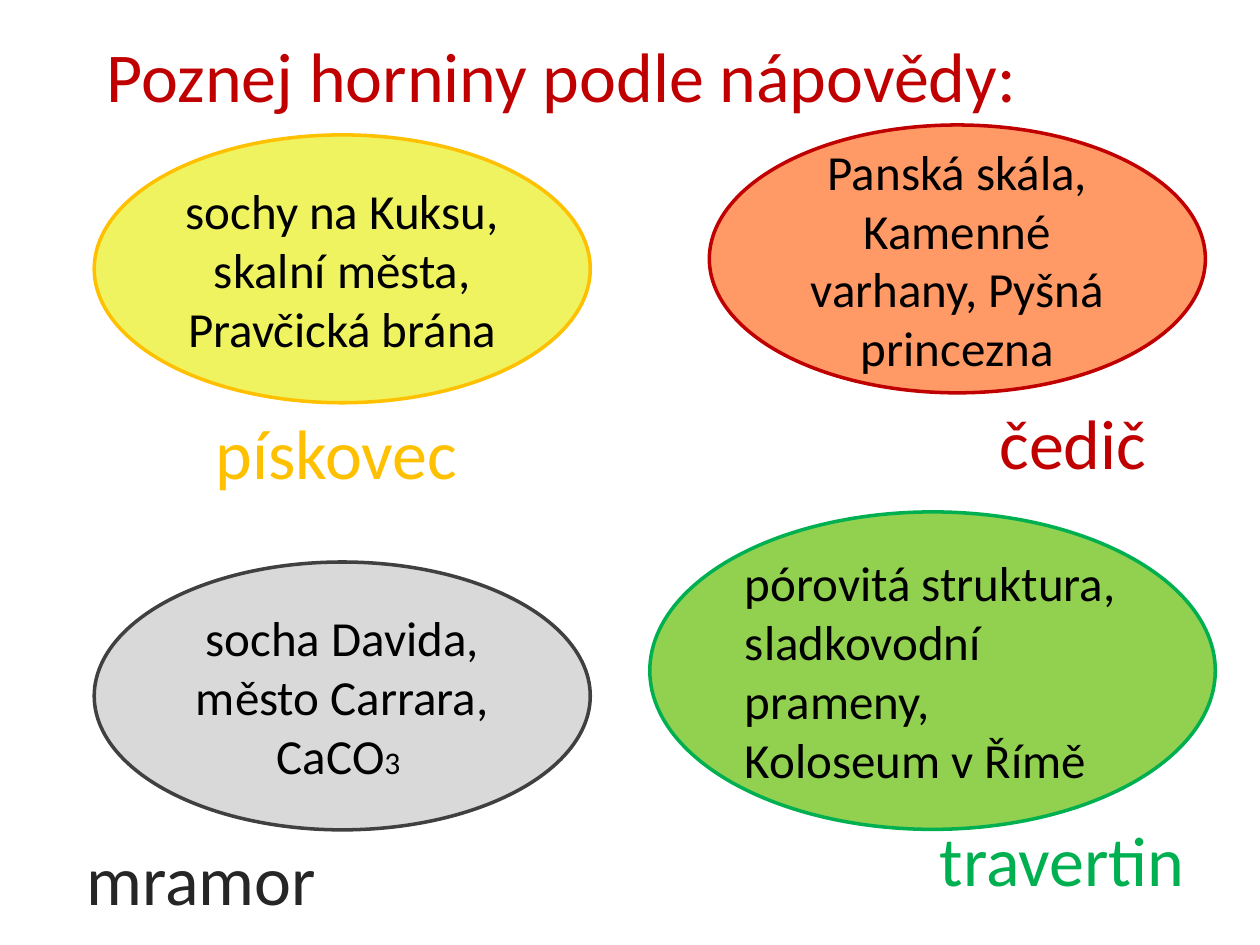
"""Build a quiz slide on recognising rocks from hints."""
from pptx import Presentation
from pptx.dml.color import RGBColor
from pptx.enum.shapes import MSO_SHAPE
from pptx.enum.text import MSO_ANCHOR, MSO_AUTO_SIZE, PP_ALIGN
from pptx.util import Cm, Pt

BLACK = RGBColor(0x00, 0x00, 0x00)
CHARCOAL = RGBColor(0x26, 0x26, 0x26)
DARK_GREY = RGBColor(0x40, 0x40, 0x40)
LIGHT_GREY = RGBColor(0xD9, 0xD9, 0xD9)
YELLOW = RGBColor(0xEF, 0xF3, 0x5F)
AMBER = RGBColor(0xFF, 0xC0, 0x00)
LIME = RGBColor(0x92, 0xD0, 0x50)
GREEN = RGBColor(0x00, 0xB0, 0x50)
ORANGE = RGBColor(0xFF, 0x99, 0x66)
RED = RGBColor(0xC0, 0x00, 0x00)


def place(shape, left, top, width, height):
    shape.left, shape.top = Cm(left), Cm(top)
    shape.width, shape.height = Cm(width), Cm(height)


def style(paragraph, size, color, align):
    paragraph.alignment = align
    paragraph.font.name = "Calibri"
    paragraph.font.size = Pt(size)
    paragraph.font.color.rgb = color


deck = Presentation()
deck.slide_width, deck.slide_height = Cm(25.4), Cm(19.05)
slide = deck.slides.add_slide(deck.slide_layouts[5])

heading = slide.shapes.title
place(heading, 1.9, 0.53, 21.03, 1.96)
heading.text_frame.text = "Poznej horniny podle nápovědy:"
heading.text_frame.vertical_anchor = MSO_ANCHOR.TOP
heading.text_frame.auto_size = MSO_AUTO_SIZE.NONE
style(heading.text_frame.paragraphs[0], 40, RED, PP_ALIGN.LEFT)

hints = [
    (["sochy na Kuksu, skalní města, Pravčická brána"],
     (1.9, 2.72, 10, 5.4), YELLOW, AMBER, PP_ALIGN.CENTER),
    (["socha Davida, město Carrara, CaCO", "3 "],
     (1.9, 11.33, 10, 5.4), LIGHT_GREY, DARK_GREY, PP_ALIGN.CENTER),
    (["pórovitá struktura, sladkovodní prameny, Koloseum v Římě"],
     (13.1, 10.32, 11.4, 6.4), LIME, GREEN, PP_ALIGN.LEFT),
    (["Panská skála, Kamenné varhany, Pyšná princezna"],
     (14.3, 2.52, 10, 5.4), ORANGE, RED, PP_ALIGN.CENTER),
]
for parts, box, fill, outline, align in hints:
    hint = slide.shapes.add_shape(MSO_SHAPE.OVAL, *map(Cm, box))
    hint.shadow.inherit = False
    hint.fill.solid()
    hint.fill.fore_color.rgb = fill
    hint.line.color.rgb = outline
    hint.line.width = Pt(2)
    hint.text_frame.word_wrap = True
    hint.text_frame.vertical_anchor = MSO_ANCHOR.MIDDLE
    clue = hint.text_frame.paragraphs[0]
    style(clue, 28, BLACK, align)
    for part in parts:
        clue.add_run().text = part
    for index in clue.runs[1:]:
        index.font.size = Pt(18)

rocks = [
    ("pískovec", 4.1, 8.13, 6.4, AMBER),
    ("čedič", 19.9, 7.92, 4.2, RED),
    ("mramor", 1.5, 16.72, 6.2, CHARCOAL),
    ("travertin", 18.7, 16.33, 6.2, GREEN),
]
for name, left, top, width, color in rocks:
    rock = slide.shapes.add_textbox(Cm(left), Cm(top), Cm(width), Cm(1.96))
    rock.text_frame.word_wrap = True
    rock.text_frame.auto_size = MSO_AUTO_SIZE.SHAPE_TO_FIT_TEXT
    rock.text_frame.text = name
    style(rock.text_frame.paragraphs[0], 40, color, PP_ALIGN.LEFT)

deck.save("out.pptx")
